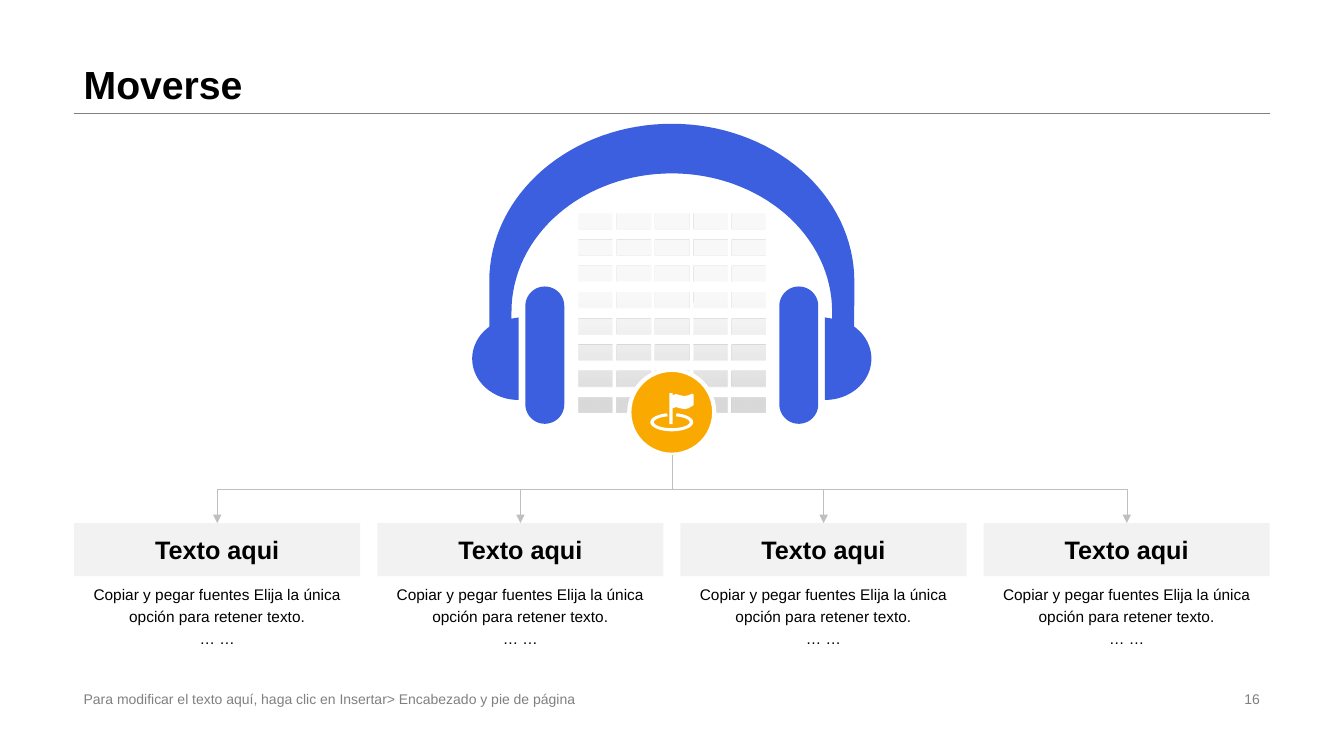
from math import cos, radians, sin

from lxml.etree import SubElement
from pptx import Presentation
from pptx.dml.color import RGBColor
from pptx.enum.shapes import MSO_CONNECTOR, MSO_SHAPE
from pptx.enum.text import MSO_ANCHOR, PP_ALIGN
from pptx.oxml.ns import qn
from pptx.util import Cm, Pt

COLORS = {
    "text": "000000",
    "muted": "808080",
    "blue": "3B5FDE",
    "orange": "FAA900",
    "white": "FFFFFF",
    "card": "F2F2F2",
    "window": "D9D9D9",
    "arrow": "BFBFBF",
}
FONT = "Arial"
CENTER = 16.93
MARGIN, RIGHT_EDGE = 1.86, 32.0
BADGE_TOP, BADGE_SIZE = 9.32, 2.14
CARD_LEFT, CARD_PITCH, CARD_WIDTH = 1.87, 7.64, 7.21
CARD_TOP, CARD_HEIGHT = 13.18, 1.34
CARD_TITLE = "Texto aqui"
CARD_LINES = ["Copiar y pegar fuentes Elija la única opción para retener texto.", "… …"]
FOOTER = "Para modificar el texto aquí, haga clic en Insertar> Encabezado y pie de página"


def color(name):
    return RGBColor.from_string(COLORS[name])


def write(shape, lines, size, name="text", bold=False, align=PP_ALIGN.LEFT,
          anchor=MSO_ANCHOR.MIDDLE, spacing=1.0):
    frame = shape.text_frame
    frame.word_wrap = True
    frame.vertical_anchor = anchor
    frame.text = "\n".join(lines)
    for paragraph in frame.paragraphs:
        paragraph.alignment = align
        paragraph.line_spacing = spacing
        paragraph.font.name = FONT
        paragraph.font.size = Pt(size)
        paragraph.font.bold = bold
        paragraph.font.color.rgb = color(name)


def add_text(slide, left, top, width, height, lines, size, **style):
    box = slide.shapes.add_textbox(Cm(left), Cm(top), Cm(width), Cm(height))
    write(box, lines, size, **style)


def add_filled(slide, kind, left, top, width, height, fill):
    shape = slide.shapes.add_shape(kind, Cm(left), Cm(top), Cm(width), Cm(height))
    shape.shadow.inherit = False
    shape.fill.solid()
    shape.fill.fore_color.rgb = color(fill)
    shape.line.fill.background()
    return shape


def style_line(connector, name):
    connector.line.color.rgb = color(name)
    connector.line.width = Pt(0.25)
    SubElement(connector.element.spPr, qn("a:effectLst"))


def arc(x, y, radius_x, radius_y, start, end, steps=32):
    angles = [radians(start + (end - start) * step / steps) for step in range(steps + 1)]
    return [(x + radius_x * cos(angle), y + radius_y * sin(angle)) for angle in angles]


def rectangle(left, top, width, height):
    right, bottom = left + width, top + height
    return [(left, top), (right, top), (right, bottom), (left, bottom)]


def mirrored(points):
    return [(-x, y) for x, y in reversed(points)]


def add_outline(slide, contours, fill):
    builder = None
    for contour in contours:
        points = [(Cm(CENTER + x), Cm(y)) for x, y in contour]
        if builder is None:
            builder = slide.shapes.build_freeform(*points[0])
        else:
            builder.move_to(*points[0])
        builder.add_line_segments(points[1:], close=True)
    shape = builder.convert_to_shape()
    shape.shadow.inherit = False
    shape.fill.solid()
    shape.fill.fore_color.rgb = color(fill)
    shape.line.fill.background()
    return shape


def add_headphones(slide):
    half_band = (
        arc(0, 7.09, 4.6, 3.97, -90, 0)
        + arc(3.86, 9.04, 1.17, 1.04, -51, 90)
        + [(3.86, 8.0), (4.04, 8.03)]
        + arc(0, 7.85, 4.04, 3.48, 0, -90)
    )
    pad = arc(3.2, 7.71, 0.49, 0.49, -180, 0) + arc(3.2, 10.19, 0.49, 0.49, 0, 180)
    add_outline(slide, [pad, mirrored(pad), half_band + mirrored(half_band)], "blue")


def add_windows(slide):
    windows = [
        rectangle(-2.35 + column * 0.96, 5.38 + row * 0.66, 0.86, 0.4)
        for row in range(8)
        for column in range(5)
    ]
    fill = add_outline(slide, windows, "window").fill
    fill.gradient()
    fill.gradient_angle = 90
    for stop, position, name in zip(fill.gradient_stops, (0.05, 0.58), ("window", "card")):
        stop.position = position
        stop.color.rgb = color(name)
    shape = slide.shapes[-1]
    light = shape.element.spPr.findall(".//" + qn("a:srgbClr"))[1]
    SubElement(light, qn("a:alpha"), val="47000")


def add_badge(slide):
    badge = add_filled(slide, MSO_SHAPE.OVAL, CENTER - BADGE_SIZE / 2, BADGE_TOP,
                       BADGE_SIZE, BADGE_SIZE, "orange")
    badge.line.color.rgb = color("white")
    badge.line.width = Pt(3)
    ring = arc(0, 10.64, 0.54, 0.23, -77, 257) + arc(0, 10.64, 0.45, 0.15, 257, -77)
    flag = [
        (-0.06, 9.91), (0.02, 9.91), (0.02, 9.96), (0.11, 9.93), (0.21, 9.96),
        (0.32, 9.98), (0.42, 9.96), (0.52, 9.92), (0.55, 9.95), (0.55, 10.21),
        (0.42, 10.29), (0.32, 10.31), (0.21, 10.29), (0.11, 10.26), (0.02, 10.29),
        (0.02, 10.69), (-0.06, 10.69),
    ]
    add_outline(slide, [ring, flag], "white")


def add_card(slide, left):
    card = add_filled(slide, MSO_SHAPE.RECTANGLE, left, CARD_TOP, CARD_WIDTH, CARD_HEIGHT, "card")
    write(card, [CARD_TITLE], 18, bold=True, align=PP_ALIGN.CENTER)
    add_text(slide, left, CARD_TOP + CARD_HEIGHT, CARD_WIDTH, 2.57, CARD_LINES, 11,
             align=PP_ALIGN.CENTER, anchor=MSO_ANCHOR.TOP, spacing=1.2)
    return card


def add_branch(slide, card):
    start_x, start_y = Cm(CENTER), Cm(BADGE_TOP + BADGE_SIZE)
    end_x, end_y = card.left + card.width // 2, card.top
    connector = slide.shapes.add_connector(MSO_CONNECTOR.ELBOW, start_x, start_y, end_x, end_y)
    connector.end_connect(card, 0)
    drop, span = end_y - start_y, abs(end_x - start_x)
    connector.left = (start_x + end_x - drop) // 2
    connector.top = (start_y + end_y - span) // 2
    connector.width, connector.height = drop, span
    goes_left = end_x < start_x
    transform = connector.element.spPr.find(qn("a:xfrm"))
    transform.set("rot", "5400000" if goes_left else "16200000")
    transform.set("flipH", "0" if goes_left else "1")
    style_line(connector, "arrow")
    SubElement(connector.line._get_or_add_ln(), qn("a:tailEnd"), type="triangle")


def main():
    presentation = Presentation()
    presentation.slide_width, presentation.slide_height = Cm(33.87), Cm(19.05)
    slide = presentation.slides.add_slide(presentation.slide_layouts[6])

    rule = slide.shapes.add_connector(MSO_CONNECTOR.STRAIGHT, Cm(MARGIN), Cm(2.85),
                                      Cm(RIGHT_EDGE), Cm(2.85))
    style_line(rule, "muted")
    add_text(slide, MARGIN, 0, RIGHT_EDGE - MARGIN, 2.85, ["Moverse"], 28, bold=True,
             anchor=MSO_ANCHOR.BOTTOM, spacing=0.9)
    add_text(slide, MARGIN, 17.32, 13.03, 0.58, [FOOTER], 10, name="muted")
    add_text(slide, 23.93, 17.32, RIGHT_EDGE - 23.93, 0.58, ["16"], 10, name="muted",
             align=PP_ALIGN.RIGHT)

    add_headphones(slide)
    add_windows(slide)
    add_badge(slide)
    cards = [add_card(slide, CARD_LEFT + index * CARD_PITCH) for index in range(4)]
    for card in cards:
        add_branch(slide, card)

    presentation.save("out.pptx")


if __name__ == "__main__":
    main()
